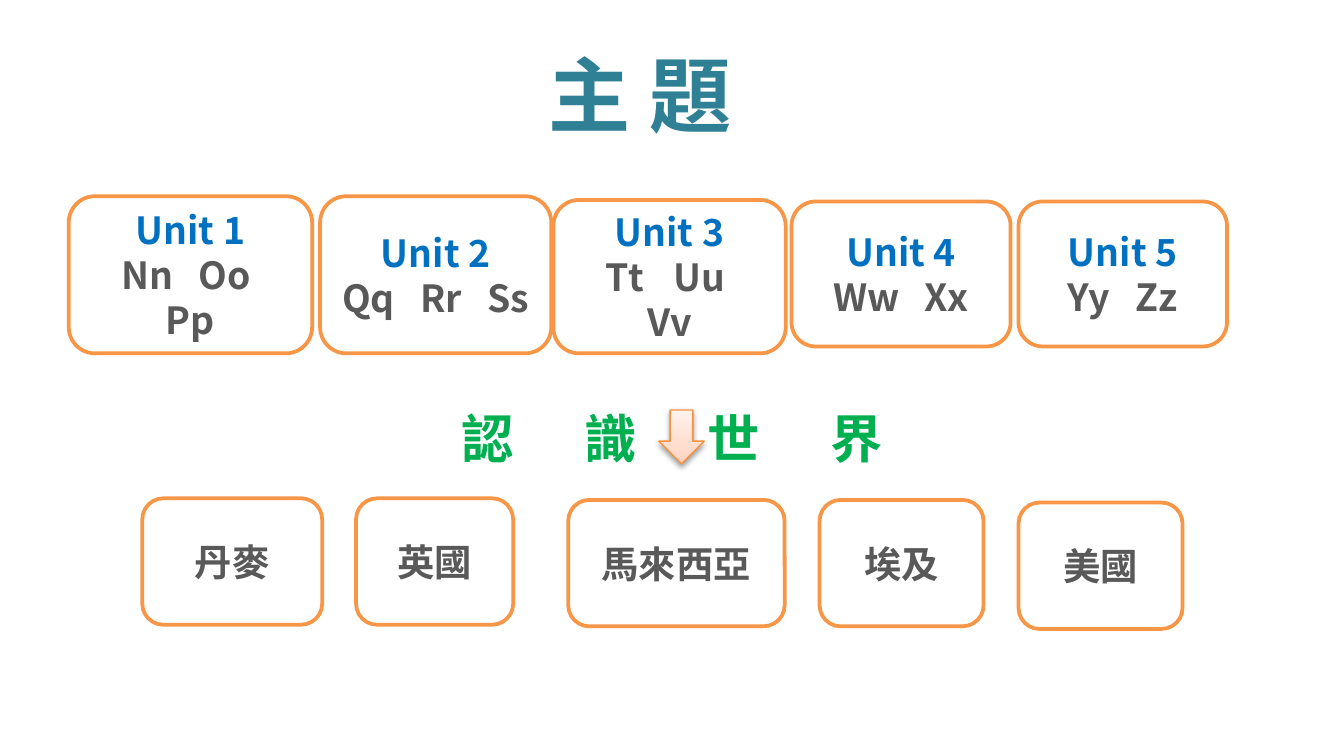
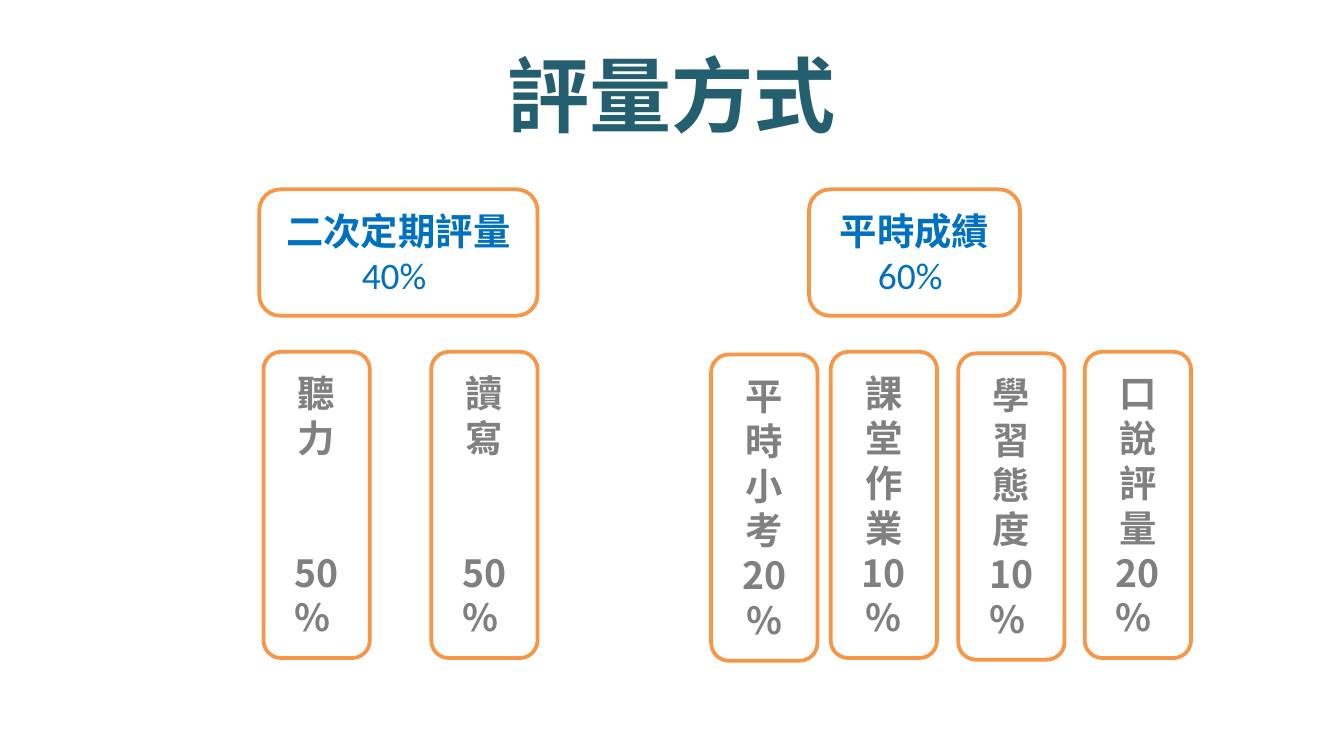
from copy import deepcopy
from lxml.etree import SubElement
from pptx import Presentation
from pptx.dml.color import RGBColor
from pptx.enum.shapes import MSO_SHAPE
from pptx.enum.text import MSO_ANCHOR, MSO_AUTO_SIZE, PP_ALIGN
from pptx.oxml.ns import qn
from pptx.util import Cm, Pt

HUES = {
    "teal": "2F7F95", "deep": "235F6F", "green": "00B050", "blue": "0070C0",
    "dark": "595959", "gray": "808080", "edge": "F79646", "white": "FFFFFF",
    "rim": "F69240", "peach": "FFD2BD", "blush": "FFDED0", "cream": "FFF2ED",
}
RGB = {name: RGBColor.from_string(hue) for name, hue in HUES.items()}
FONT = "Noto Sans CJK SC"


def write(para, text, size=20, hue="dark", bold=True, font=FONT,
          align=PP_ALIGN.CENTER, gap=0, before=0):
    """Fill a paragraph; gap widens each space between words, in points."""
    para.alignment = align
    para.space_before = Pt(before)
    parts = [text]
    if gap:
        parts = " | |".join(text.split()).split("|")
    for part in parts:
        run = para.add_run()
        run.text = part
        run.font.size = Pt(size)
        run.font.bold = bold
        run.font.color.rgb = RGB[hue]
        run.font.name = font
        props = run._r.get_or_add_rPr()
        SubElement(props, qn("a:ea")).set("typeface", font)
        if part == " ":
            props.set("spc", str(round(gap * 100)))


def card(slide, left, top, wide, high, lines):
    """Draw a rounded card; lines holds pairs of text and format."""
    shape = slide.shapes.add_shape(MSO_SHAPE.FLOWCHART_ALTERNATE_PROCESS,
                                   Cm(left), Cm(top), Cm(wide), Cm(high))
    shape.shadow.inherit = False
    shape.fill.solid()
    shape.fill.fore_color.rgb = RGB["white"]
    shape.line.color.rgb = RGB["edge"]
    shape.line.width = Pt(2)
    frame = shape.text_frame
    frame.word_wrap = True
    frame.vertical_anchor = MSO_ANCHOR.MIDDLE
    for i, (text, form) in enumerate(lines):
        para = frame.add_paragraph() if i else frame.paragraphs[0]
        write(para, text, **form)


deck = Presentation()
deck.slide_width, deck.slide_height = Cm(25.4), Cm(14.29)

# Both slides with their titles
theme = deck.slides.add_slide(deck.slide_layouts[1])
grade = deck.slides.add_slide(deck.slide_layouts[5])
heads = [(theme, "主 題", "teal", PP_ALIGN.LEFT),
         (grade, "評量方式", "deep", PP_ALIGN.CENTER)]
for slide, text, hue, align in heads:
    title = slide.shapes.title
    title.left, title.top = Cm(1.27), Cm(0.58)
    title.width, title.height = Cm(22.86), Cm(2.39)
    frame = title.text_frame
    frame.vertical_anchor = MSO_ANCHOR.MIDDLE
    frame.auto_size = MSO_AUTO_SIZE.NONE
    write(frame.paragraphs[0], text, size=44, hue=hue, align=align)
theme.shapes.title.text_frame.margin_left = Cm(9.1)

# Theme: line in the middle
body = theme.placeholders[1]
body.left, body.top = Cm(1.27), Cm(3.33)
body.width, body.height = Cm(22.86), Cm(9.42)
frame = body.text_frame
frame.auto_size = MSO_AUTO_SIZE.NONE
frame.margin_top = Cm(4.35)
para = frame.paragraphs[0]
props = para._p.get_or_add_pPr()
props.set("marL", "0")
props.set("indent", "0")
SubElement(props, qn("a:buNone"))
write(para, "認 識 世 界", size=28, hue="green", gap=25.3)

# Theme: units
units = [
    (1.3, 3.71, 4.6, 2.97, "Nn Oo Pp", 4.5),
    (6.05, 3.71, 4.37, 2.97, "Qq Rr Ss", 4.5),
    (10.46, 3.78, 4.39, 2.9, "Tt Uu Vv", 6.8),
    (14.96, 3.81, 4.14, 2.74, "Ww Xx", 4.5),
    (19.25, 3.81, 3.94, 2.74, "Yy Zz", 4.5),
]
for i, (*spot, text, gap) in enumerate(units, 1):
    card(theme, *spot, [(f"Unit {i}", {"hue": "blue"}), (text, {"gap": gap})])

# Theme: arrow
arrow = theme.shapes.add_shape(MSO_SHAPE.DOWN_ARROW,
                               Cm(12.45), Cm(7.75), Cm(0.86), Cm(1.02))
arrow.line.color.rgb = RGB["rim"]
arrow.line.width = Pt(0.75)
arrow.fill.gradient()
arrow.fill.gradient_angle = 90
style = arrow._element.spPr
stops = style.find(qn("a:gradFill")).find(qn("a:gsLst"))
stops.insert(1, deepcopy(stops[0]))
tints = [(0, "peach"), (0.35, "blush"), (1, "cream")]
for stop, (place, hue) in zip(arrow.fill.gradient_stops, tints):
    stop.position = place
    stop.color.rgb = RGB[hue]
arrow.shadow.inherit = False
shade = SubElement(style.find(qn("a:effectLst")), qn("a:outerShdw"),
                   blurRad=str(Pt(3.1)), dist=str(Pt(1.6)),
                   dir="5400000", rotWithShape="0")
black = SubElement(shade, qn("a:srgbClr"), val="000000")
SubElement(black, qn("a:alpha"), val="38000")

# Theme: countries
lands = [(2.69, 9.42, 3.4, "丹麥"), (6.73, 9.42, 2.97, "英國"),
         (10.74, 9.45, 4.09, "馬來西亞"), (15.49, 9.45, 3.1, "埃及"),
         (19.25, 9.5, 3.1, "美國")]
for left, top, wide, name in lands:
    card(theme, left, top, wide, 2.39, [(name, {})])

# Grades: two main shares
shares = [(4.9, 5.26, "二次定期評量", "40% "), (15.29, 3.99, "平時成績", "60% ")]
for left, wide, name, rate in shares:
    card(grade, left, 3.58, wide, 2.39, [
        (name, {"hue": "blue"}),
        (rate, {"hue": "blue", "bold": False, "font": "Calibri"})])

# Grades: columns, with the rate set lower under the short names
parts = [
    (4.98, 6.65, ["聽", "力", "50% "], 48),
    (8.15, 6.65, ["讀寫", "50% "], 48),
    (13.44, 6.7, ["平時小考", "20%"], 0),
    (15.7, 6.65, ["課堂作業", "10%"], 0),
    (18.11, 6.68, ["學習態度10% "], 0),
    (20.5, 6.65, ["口說", "評量", "20% "], 0),
]
for left, top, texts, drop in parts:
    lines = [(text, {"hue": "gray"}) for text in texts]
    lines[-1][1]["before"] = drop
    card(grade, left, top, 2.01, 5.79, lines)

deck.save("out.pptx")
